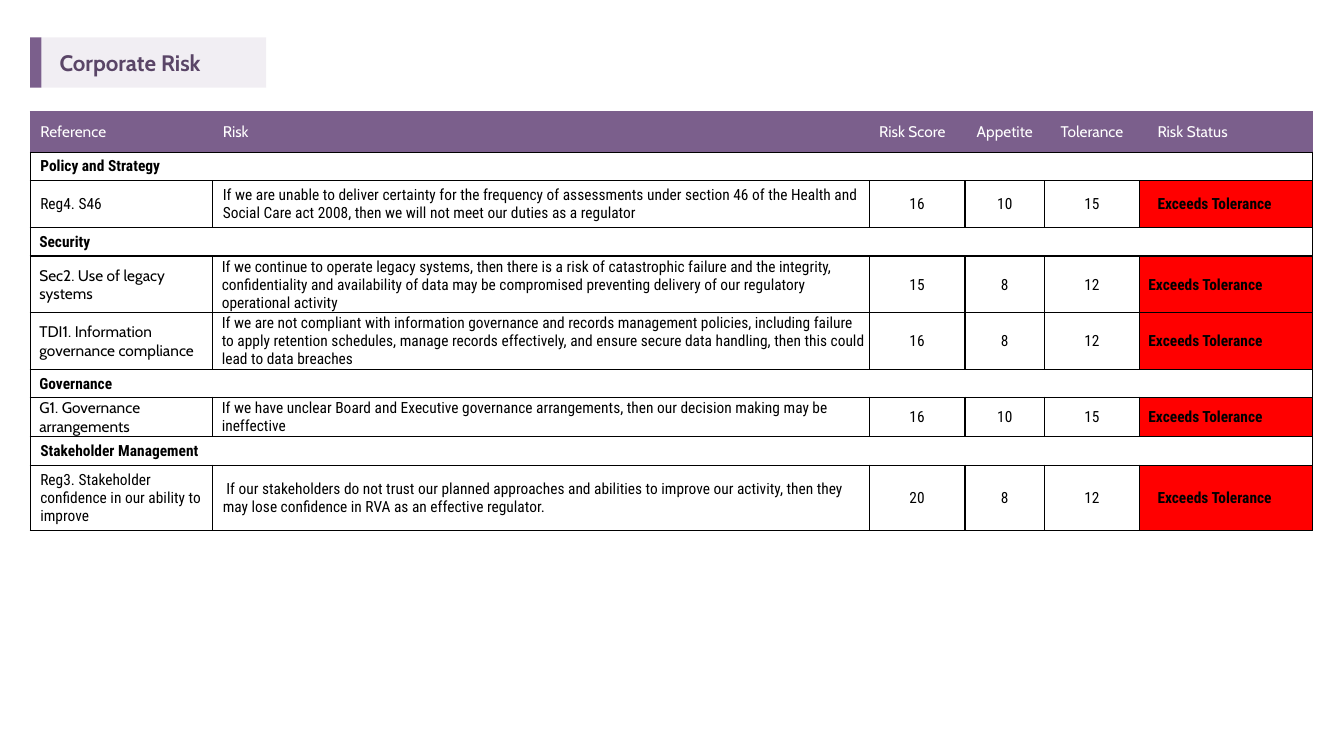
from dataclasses import dataclass

from lxml import etree
from pptx import Presentation, util as u
from pptx.dml import color
from pptx.enum import shapes, text
from pptx.oxml import ns

COLORS = {
    "purple": "7B5F8C",
    "title": "5A4567",
    "white": "FFFFFF",
    "black": "000000",
    "red": "FF0000",
}
BODY, HEADING = "Roboto Condensed", "Cabin"
SLIDE_W, SLIDE_H = u.Inches(13.33), u.Inches(7.5)
COLUMNS = (13.58, 48.84, 7.13, 5.93, 7.05, 12.9)
HEADER_HEIGHT = 5.33
HEADERS = ("Reference", "Risk", "Risk Score", "Appetite", "Tolerance", "Risk Status")
STATUS = "Exceeds Tolerance"
STATUS_COLUMN = len(COLUMNS) - 1
LEFT, CENTER = text.PP_ALIGN.LEFT, text.PP_ALIGN.CENTER


@dataclass(frozen=True)
class Box:
    left: float
    top: float
    width: float
    height: float


@dataclass(frozen=True)
class Section:
    name: str
    height: float
    tight: bool = False


@dataclass(frozen=True)
class Risk:
    reference: str
    description: str
    scores: tuple[int, int, int]
    height: float
    tight: bool = False


ROWS = (
    Section("Policy and Strategy", 3.73),
    Risk("Reg4. S46",
         "If we are unable to deliver certainty for the frequency of assessments under "
         "section 46 of the Health and Social Care act 2008, then we will not meet our "
         "duties as a regulator", (16, 10, 15), 6.2),
    Section("Security", 3.73, True),
    Risk("Sec2. Use of legacy systems",
         "If we continue to operate legacy systems, then there is a risk of catastrophic "
         "failure and the integrity, confidentiality and availability of data may be "
         "compromised preventing delivery of our regulatory operational activity",
         (15, 8, 12), 7.5, True),
    Risk("TDI1. Information governance compliance",
         "If we are not compliant with information governance and records management "
         "policies, including failure to apply retention schedules, manage records "
         "effectively, and ensure secure data handling, then this could lead to data "
         "breaches", (16, 8, 12), 7.5, True),
    Section("Governance", 3.67, True),
    Risk("G1. Governance arrangements",
         "If we have unclear Board and Executive governance arrangements, then our "
         "decision making may be ineffective", (16, 10, 15), 5.2, True),
    Section("Stakeholder Management", 3.8),
    Risk("Reg3. Stakeholder confidence in our ability to improve",
         " If our stakeholders do not trust our planned approaches and abilities to "
         "improve our activity, then they may lose confidence in RVA as an effective "
         "regulator.", (20, 8, 12), 8.67),
)


def across(percent: float) -> int:
    return round(SLIDE_W * percent / 100)


def down(percent: float) -> int:
    return round(SLIDE_H * percent / 100)


def place(box: Box) -> tuple[int, int, int, int]:
    return across(box.left), down(box.top), across(box.width), down(box.height)


def rgb(name: str) -> color.RGBColor:
    return color.RGBColor.from_string(COLORS[name])


def write(tf, words: str, *, font=BODY, size=11, ink="black", bold=False,
          align=LEFT, indent=0.0) -> None:
    p = tf.paragraphs[0]
    p.alignment = align
    if indent:
        p._p.get_or_add_pPr().set("marL", str(u.Inches(indent)))
    r = p.add_run()
    r.text = words
    r.font.name, r.font.size, r.font.bold = font, u.Pt(size), bold
    r.font.color.rgb = rgb(ink)


def add_rect(s, box: Box, opacity: int = 100) -> None:
    sp = s.shapes.add_shape(shapes.MSO_SHAPE.RECTANGLE, *place(box))
    sp.shadow.inherit = False
    sp.line.fill.background()
    sp.fill.solid()
    sp.fill.fore_color.rgb = rgb("purple")
    if opacity < 100:
        clr = sp.element.spPr.find(".//" + ns.qn("a:srgbClr"))
        etree.SubElement(clr, ns.qn("a:alpha")).set("val", str(opacity * 1000))


def add_title(s, box: Box, words: str) -> None:
    sp = s.shapes.title
    sp.left, sp.top, sp.width, sp.height = place(box)
    tf = sp.text_frame
    tf.word_wrap = True
    tf.auto_size = text.MSO_AUTO_SIZE.SHAPE_TO_FIT_TEXT
    tf.vertical_anchor = text.MSO_ANCHOR.MIDDLE
    write(tf, words, font=HEADING, size=16, ink="title", bold=True)
    sp.element.getparent().append(sp.element)


def set_borders(cell, header: bool) -> None:
    tc_pr = cell._tc.get_or_add_tcPr()
    for i, side in enumerate(("lnL", "lnR", "lnT", "lnB")):
        purple = header and side != "lnB"
        ln = etree.Element(ns.qn(f"a:{side}"), w=str(u.Pt(0.75 if purple else 1)))
        fill = etree.SubElement(ln, ns.qn("a:solidFill"))
        ink = COLORS["purple" if purple else "black"]
        etree.SubElement(fill, ns.qn("a:srgbClr"), val=ink)
        tc_pr.insert(i, ln)


def style_cell(cell, *, fill="white", tight=False, header=False) -> None:
    cell.vertical_anchor = text.MSO_ANCHOR.MIDDLE
    if tight:
        cell.margin_left = cell.margin_right = cell.margin_top = u.Inches(0.01)
        cell.margin_bottom = 0
    cell.fill.solid()
    cell.fill.fore_color.rgb = rgb(fill)
    set_borders(cell, header)


def fill_header(cells) -> None:
    for i, (cell, words) in enumerate(zip(cells, HEADERS)):
        style_cell(cell, fill="purple", header=True)
        write(cell.text_frame, words, font=HEADING, ink="white",
              align=CENTER if i in (3, 4) else LEFT,
              indent=0.08 if i == STATUS_COLUMN else 0)


def fill_section(cells, section: Section) -> None:
    for cell in cells:
        style_cell(cell, tight=section.tight)
    cells[0].merge(cells[-1])
    write(cells[0].text_frame, section.name, bold=True,
          indent=0.08 if section.tight else 0)


def fill_risk(cells, risk: Risk) -> None:
    values = (risk.reference, risk.description, *map(str, risk.scores), STATUS)
    for i, (cell, words) in enumerate(zip(cells, values)):
        status, score = i == STATUS_COLUMN, 2 <= i < STATUS_COLUMN
        style_cell(cell, fill="red" if status else "white", tight=risk.tight)
        write(cell.text_frame, words, bold=status,
              font=HEADING if risk.tight and i == 0 else BODY,
              align=CENTER if score else LEFT,
              indent=0.08 if status or (risk.tight and not score) else 0)


def add_risk_table(s, left: float, top: float) -> None:
    heights = (HEADER_HEIGHT, *(row.height for row in ROWS))
    box = Box(left, top, sum(COLUMNS), sum(heights))
    table = s.shapes.add_table(len(heights), len(COLUMNS), *place(box)).table
    table.first_row = table.horz_banding = False
    for column, width in zip(table.columns, COLUMNS):
        column.width = across(width)
    for row, height in zip(table.rows, heights):
        row.height = down(height)
    grid = [list(row.cells) for row in table.rows]
    fill_header(grid[0])
    for cells, row in zip(grid[1:], ROWS):
        if isinstance(row, Section):
            fill_section(cells, row)
        else:
            fill_risk(cells, row)


def main() -> None:
    prs = Presentation()
    prs.slide_width, prs.slide_height = SLIDE_W, SLIDE_H
    s = prs.slides.add_slide(prs.slide_layouts[5])
    add_rect(s, Box(2.25, 4.93, 0.83, 6.67))
    add_rect(s, Box(3.08, 4.93, 16.73, 6.67), opacity=10)
    add_title(s, Box(3.68, 5.87, 13.35, 4.93), "Corporate Risk")
    add_risk_table(s, 2.25, 14.8)
    prs.save("out.pptx")


if __name__ == "__main__":
    main()
